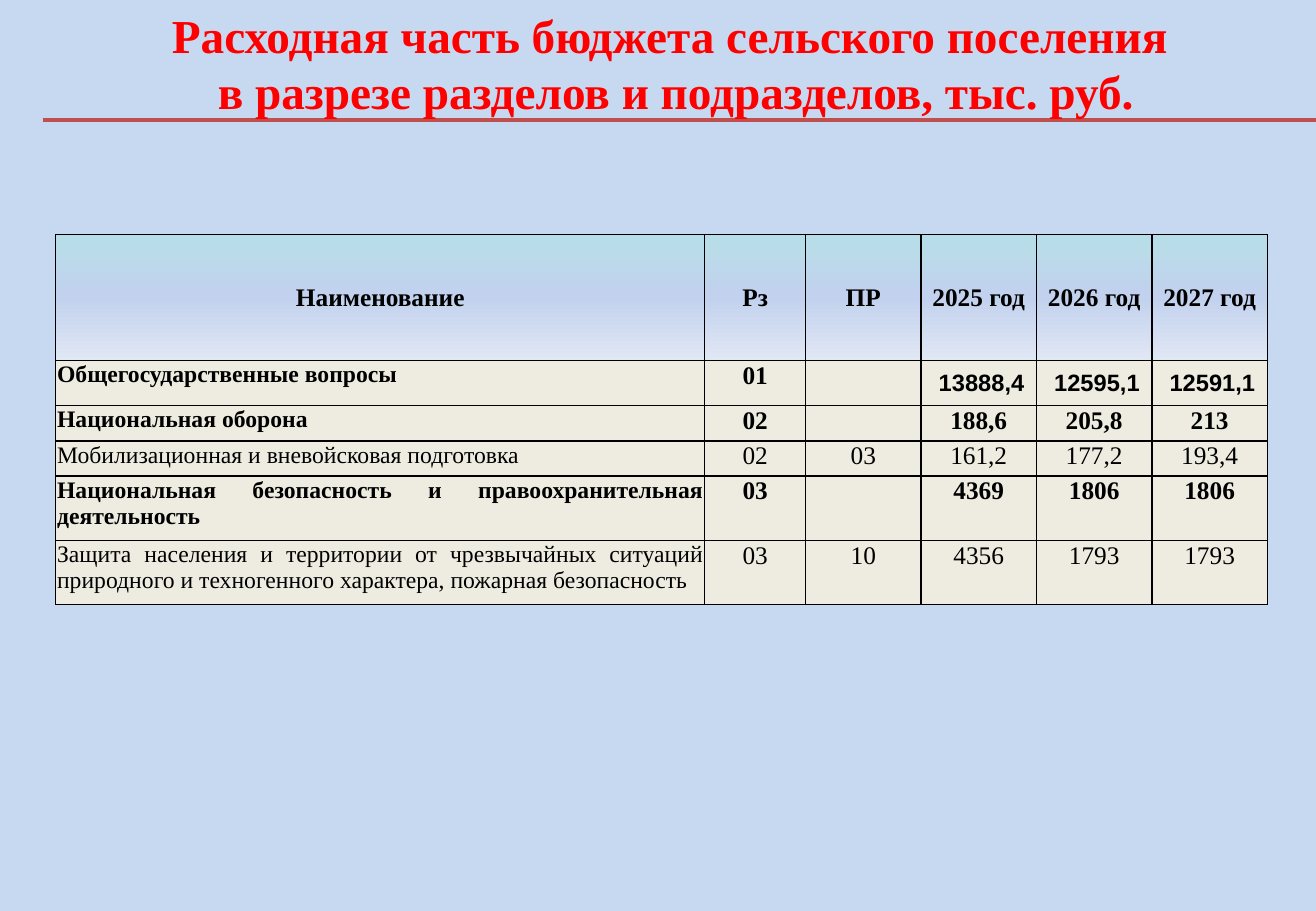
from dataclasses import dataclass

import pptx
import pptx.dml.color
import pptx.enum.shapes
import pptx.enum.text
import pptx.oxml
import pptx.oxml.ns
import pptx.util

TITLE = "Расходная часть бюджета сельского поселения \vв разрезе разделов и подразделов, тыс. руб."
HEADINGS = ("Наименование", "Рз", "ПР", "2025 год", "2026 год", "2027 год")
EXPENSES = [
    ("Общегосударственные вопросы", "01", "", "13888,4", "12595,1", "12591,1"),
    ("Национальная оборона", "02", "", "188,6", "205,8", "213"),
    ("Мобилизационная и вневойсковая подготовка", "02", "03", "161,2", "177,2", "193,4"),
    ("Национальная безопасность и правоохранительная деятельность",
     "03", "", "4369", "1806", "1806"),
    ("Защита населения и территории от чрезвычайных ситуаций природного и "
     "техногенного характера, пожарная безопасность", "03", "10", "4356", "1793", "1793"),
]
COLUMN_WIDTHS = (5.34, 0.83, 0.95, 0.95, 0.95, 0.95)
ROW_HEIGHTS = (1.04, 0.37, 0.29, 0.29, 0.53, 0.53)
RULE_WEIGHTS = (0.5, 1, 0.5, 1, 1, 1, 1)  # horizontal rules, top to bottom
SLIDE_WIDTH, SLIDE_HEIGHT = 10.83, 7.5
RULE_LEFT, RULE_TOP = 0.35, 0.99
TABLE_LEFT, TABLE_TOP = 0.46, 1.93


@dataclass(frozen=True)
class Theme:
    background: str = "C6D9F1"
    title: str = "FF0000"
    rule: str = "C0504D"
    ink: str = "000000"
    body: str = "EEECE1"
    header: tuple = ((0, "B7DEE8"), (50, "C2D1ED"), (100, "E1E8F5"))
    serif: str = "Times New Roman"
    sans: str = "Arial"
    title_size: int = 28
    code_size: int = 15
    name_size: int = 14


THEME = Theme()
ALIGN = pptx.enum.text.PP_ALIGN
MIDDLE = pptx.enum.text.MSO_ANCHOR.MIDDLE
Inches, Pt = pptx.util.Inches, pptx.util.Pt
NAMESPACE = pptx.oxml.ns.nsdecls("a")


def rgb(code):
    return pptx.dml.color.RGBColor.from_string(code)


def style(paragraph, align, font_name, size, color, bold):
    paragraph.alignment = align
    for run in paragraph.runs:
        run.font.name, run.font.size, run.font.bold = font_name, Pt(size), bold
        run.font.color.rgb = rgb(color)
    if not paragraph.runs:
        paragraph._p.get_or_add_endParaRPr().set("sz", str(size * 100))


def add_borders(cell, row, column):
    """Vertical rules alternate thin and thick; horizontal ones follow RULE_WEIGHTS."""
    thin, thick = 0.5, 1
    left, right = (thick, thin) if column % 2 else (thin, thick)
    weights = {"lnL": left, "lnR": right,
               "lnT": RULE_WEIGHTS[row], "lnB": RULE_WEIGHTS[row + 1]}
    properties = cell._tc.get_or_add_tcPr()
    for position, (side, weight) in enumerate(weights.items()):
        properties.insert(position, pptx.oxml.parse_xml(
            f'<a:{side} {NAMESPACE} w="{Pt(weight)}"><a:solidFill>'
            f'<a:srgbClr val="{THEME.ink}"/></a:solidFill></a:{side}>'))


def fill_header(cell):
    stops = "".join(f'<a:gs pos="{share * 1000}"><a:srgbClr val="{color}"/></a:gs>'
                    for share, color in THEME.header)
    cell._tc.get_or_add_tcPr().append(pptx.oxml.parse_xml(
        f'<a:gradFill {NAMESPACE}><a:gsLst>{stops}</a:gsLst>'
        '<a:lin ang="5400000" scaled="0"/></a:gradFill>'))


def fill_cell(cell, row, column, text):
    is_header = row == 0
    is_total = row == 1 and column > 2
    is_name = column == 0 and not is_header
    bold = is_header or not EXPENSES[row - 1][2]
    if is_header:
        margins = (0.09, 0.08, 0.09, 0.08)
    elif is_total:
        margins = (0.1, 0.05, 0.1, 0.05)
    else:
        margins = (0.01, 0.01, 0.01, 0)
    cell.margin_left, cell.margin_top, cell.margin_right, cell.margin_bottom = map(Inches, margins)
    if is_header or is_total:
        cell.vertical_anchor = MIDDLE
    cell.text_frame.text = text
    align = ALIGN.RIGHT if is_total else ALIGN.JUSTIFY if is_name else ALIGN.CENTER
    style(cell.text_frame.paragraphs[0], align,
          THEME.sans if is_total else THEME.serif,
          THEME.name_size if is_name or is_total else THEME.code_size,
          THEME.ink, bold)
    if is_header:
        fill_header(cell)
    else:
        cell.fill.solid()
        cell.fill.fore_color.rgb = rgb(THEME.body)
    add_borders(cell, row, column)


def add_rule(slide):
    rule = slide.shapes.add_connector(
        pptx.enum.shapes.MSO_CONNECTOR.STRAIGHT,
        Inches(RULE_LEFT), Inches(RULE_TOP), Inches(SLIDE_WIDTH), Inches(RULE_TOP))
    rule.line.color.rgb = rgb(THEME.rule)
    rule.line.width = Pt(2.5)
    rule._element.spPr.append(pptx.oxml.parse_xml(f"<a:effectLst {NAMESPACE}/>"))


def add_title(slide):
    title = slide.shapes.add_textbox(Inches(0.53), 0, Inches(10.06), Inches(1.04))
    title.text_frame.word_wrap = True
    title.text_frame.text = TITLE
    style(title.text_frame.paragraphs[0], ALIGN.CENTER, THEME.serif,
          THEME.title_size, THEME.title, True)


def add_budget(slide):
    rows = [HEADINGS, *EXPENSES]
    budget = slide.shapes.add_table(
        len(rows), len(HEADINGS), Inches(TABLE_LEFT), Inches(TABLE_TOP),
        Inches(sum(COLUMN_WIDTHS)), Inches(sum(ROW_HEIGHTS))).table
    budget.first_row = budget.horz_banding = False
    for column, width in zip(budget.columns, COLUMN_WIDTHS):
        column.width = Inches(width)
    for row, height in zip(budget.rows, ROW_HEIGHTS):
        row.height = Inches(height)
    for r, texts in enumerate(rows):
        for c, text in enumerate(texts):
            fill_cell(budget.cell(r, c), r, c, text)


def main():
    deck = pptx.Presentation()
    deck.slide_width, deck.slide_height = Inches(SLIDE_WIDTH), Inches(SLIDE_HEIGHT)
    slide = deck.slides.add_slide(deck.slide_layouts[6])
    slide.background.fill.solid()
    slide.background.fill.fore_color.rgb = rgb(THEME.background)
    add_rule(slide)
    add_title(slide)
    add_budget(slide)
    deck.save("out.pptx")


if __name__ == "__main__":
    main()
